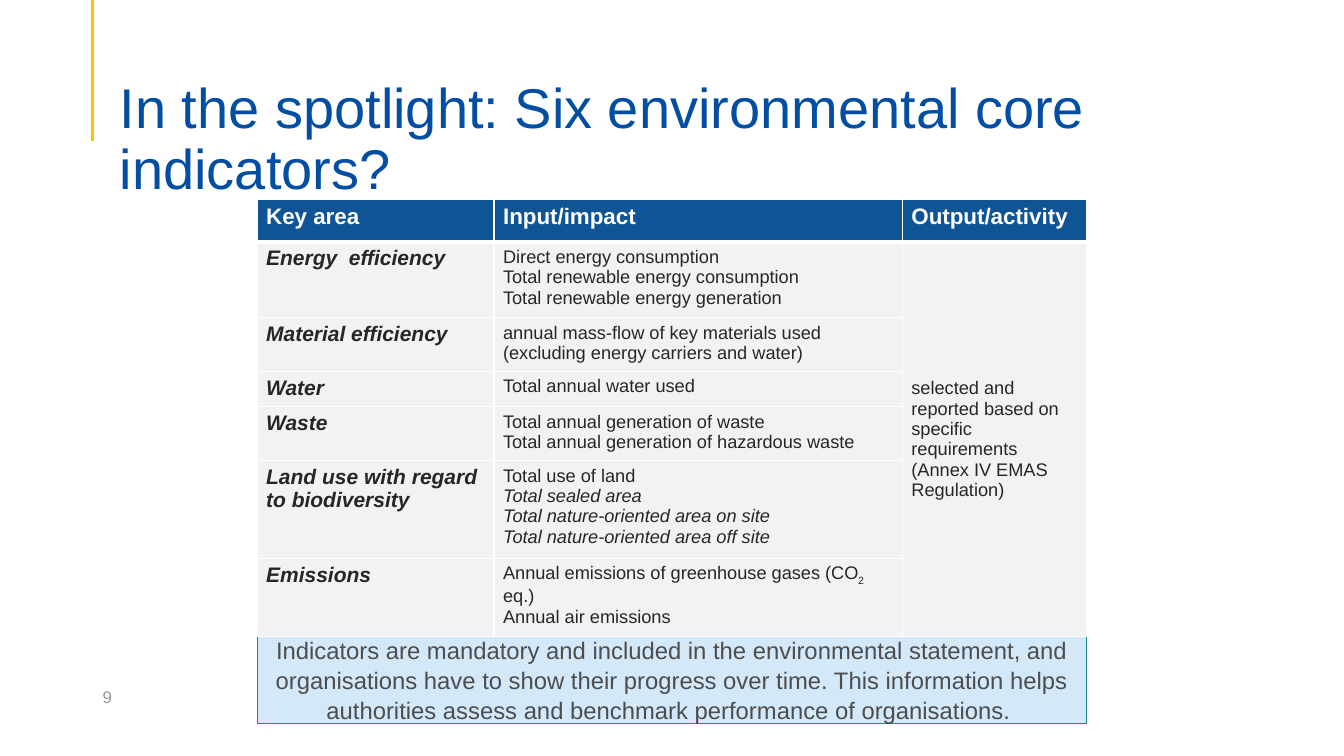
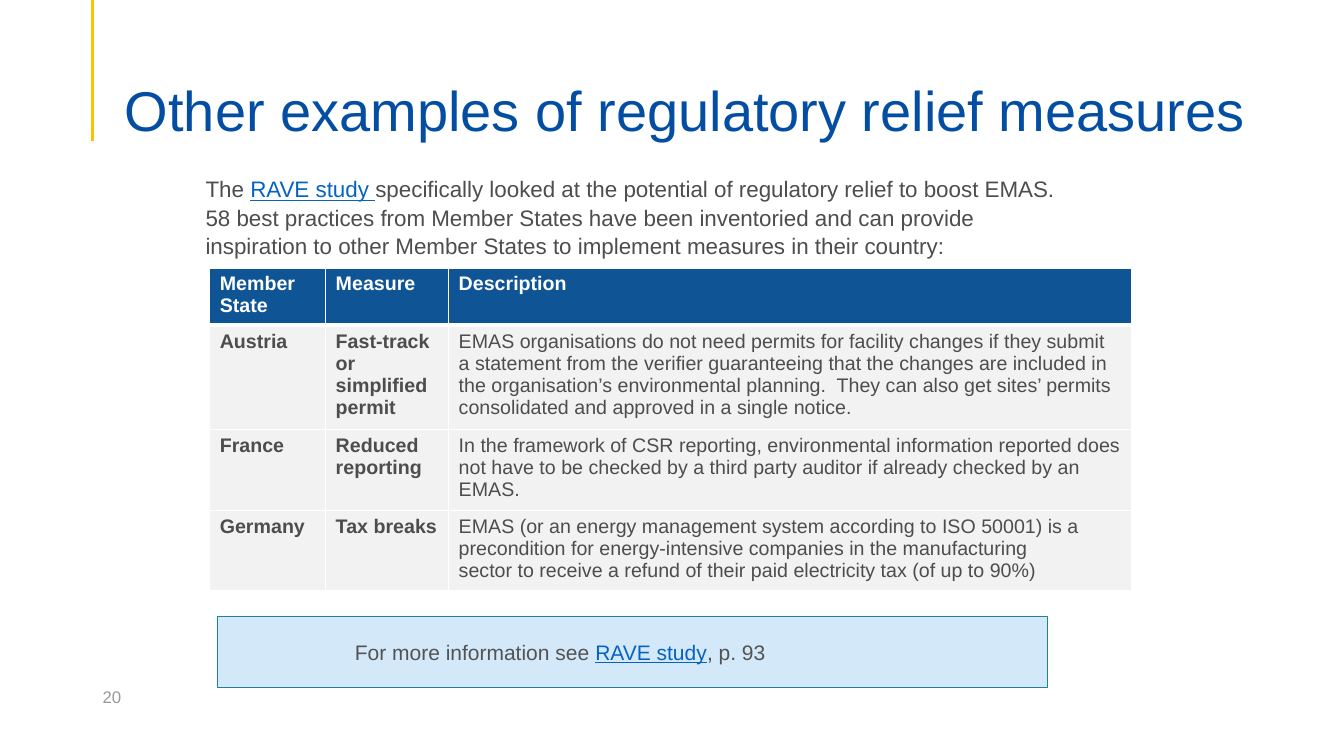
"""Builds two slides on environmental indicators and regulatory relief."""
from dataclasses import dataclass

from lxml import etree
from pptx import Presentation
from pptx.dml.color import RGBColor
from pptx.enum.shapes import MSO_CONNECTOR, MSO_SHAPE
from pptx.enum.text import MSO_ANCHOR, PP_ALIGN
from pptx.oxml.ns import qn
from pptx.util import Pt

RECT = MSO_SHAPE.RECTANGLE
STRAIGHT = MSO_CONNECTOR.STRAIGHT
TOP, MIDDLE, BOTTOM = MSO_ANCHOR.TOP, MSO_ANCHOR.MIDDLE, MSO_ANCHOR.BOTTOM
LEFT, CENTER = PP_ALIGN.LEFT, PP_ALIGN.CENTER
PX = 9144
SIDES = ("left", "top", "right", "bottom")


@dataclass(frozen=True)
class Theme:
    """Colours, font and type sizes of the deck."""
    font: str = "Arial"
    title: str = "034EA2"
    accent: str = "FFC000"
    header: str = "0F5494"
    row: str = "F2F2F2"
    white: str = "FFFFFF"
    dark: str = "262626"
    text: str = "4D4D4D"
    note: str = "535353"
    link: str = "0563C1"
    number: str = "979797"
    callout: str = "D3E8F9"
    callout_line: str = "1E858B"
    title_size: int = 40
    number_size: int = 12


T = Theme()
LINK = {"color": T.link, "underline": True}
ITALIC = {"italic": True}


def px(n):
    """Turn whole px into EMU."""
    return n * PX


def rgb(value):
    """Turn a hex string into a colour."""
    return RGBColor.from_string(value)


class Deck:
    """Holds the presentation, its theme and the current slide."""

    def __init__(self):
        self.prs = Presentation()
        self.prs.slide_width, self.prs.slide_height = px(1333), px(750)
        self.s = None

    def slide(self, title, x, y, w, h, number):
        """Start a slide with accent line, title and page number."""
        self.s = self.prs.slides.add_slide(self.prs.slide_layouts[6])
        self.line(92, 0, 92, 140)
        self.text([title], x, y, w, h, {"size": T.title_size, "color": T.title},
                  anchor=BOTTOM, insets=(10, 5, 10, 0), spacing=0.9)
        self.text([str(number)], 92, 671, 300, 40,
                  {"size": T.number_size, "color": T.number}, anchor=MIDDLE)

    def line(self, x1, y1, x2, y2):
        """Draw an accent line."""
        sp = self.s.shapes.add_connector(STRAIGHT, px(x1), px(y1), px(x2), px(y2))
        sp.line.color.rgb = rgb(T.accent)
        sp.line.width = Pt(2.25)
        etree.SubElement(sp._element.spPr, qn("a:effectLst"))

    def text(self, paras, x, y, w, h, fmt, **frame):
        """Add a text box."""
        sp = self.s.shapes.add_textbox(px(x), px(y), px(w), px(h))
        self.frame(sp.text_frame, paras, fmt, **frame)

    def callout(self, paras, x, y, w, h, fmt, **frame):
        """Add a tinted box with text."""
        sp = self.s.shapes.add_shape(RECT, px(x), px(y), px(w), px(h))
        sp.shadow.inherit = False
        sp.fill.solid()
        sp.fill.fore_color.rgb = rgb(T.callout)
        sp.line.color.rgb = rgb(T.callout_line)
        sp.line.width = Pt(0.5)
        self.frame(sp.text_frame, paras, fmt, anchor=MIDDLE, **frame)

    def frame(self, tf, paras, fmt, anchor=TOP, insets=(10, 5, 10, 5), **para):
        """Set up a text frame and fill it."""
        tf.word_wrap = True
        tf.vertical_anchor = anchor
        for side, inset in zip(SIDES, insets):
            setattr(tf, f"margin_{side}", px(inset))
        self.fill(tf, paras, fmt, **para)

    def fill(self, tf, paras, fmt, align=LEFT, spacing=None):
        """Write paragraphs, each a string or a list of runs."""
        for i, runs in enumerate(paras):
            p = tf.add_paragraph() if i else tf.paragraphs[0]
            p.alignment = align
            p.line_spacing = spacing
            for run in [runs] if isinstance(runs, str) else runs:
                text, extra = (run, {}) if isinstance(run, str) else run
                r = p.add_run()
                r.text = text
                self.format(r, {"name": T.font, **fmt, **extra})

    def format(self, r, fmt):
        """Apply format values to a run."""
        for key, value in fmt.items():
            if key == "color":
                r.font.color.rgb = rgb(value)
            elif key == "baseline":
                r._r.get_or_add_rPr().set(key, str(value))
            else:
                setattr(r.font, key, Pt(value) if key == "size" else value)

    def border(self, cell, tag, width):
        """Draw one white cell edge."""
        ln = etree.SubElement(cell._tc.get_or_add_tcPr(), qn(f"a:{tag}"),
                              w=str(Pt(width)))
        solid = etree.SubElement(ln, qn("a:solidFill"))
        etree.SubElement(solid, qn("a:srgbClr"), val=T.white)

    def table(self, rows, x, y, widths, heights, header, columns, inset, merge=None):
        """Add a table with a header row and one format per column."""
        table = self.s.shapes.add_table(len(rows), len(widths), px(x), px(y),
                                        px(sum(widths)), px(sum(heights))).table
        for col, w in zip(table.columns, widths):
            col.width = px(w)
        for row, h in zip(table.rows, heights):
            row.height = px(h)
        for i, row in enumerate(rows):
            for j, fmt in enumerate(columns):
                cell = table.cell(i, j)
                for side, margin in zip(SIDES, (inset, 5, inset, 5)):
                    setattr(cell, f"margin_{side}", px(margin))
                for tag, thick in (("lnL", False), ("lnR", False),
                                   ("lnT", i == 1), ("lnB", i == 0)):
                    self.border(cell, tag, 3 if thick else 1)
                cell.fill.solid()
                cell.fill.fore_color.rgb = rgb(T.row if i else T.header)
                if j < len(row):
                    self.fill(cell.text_frame, row[j], fmt if i else header)
        if merge:
            first, last = (table.cell(*at) for at in merge)
            first.merge(last)
            first.vertical_anchor = MIDDLE


def indicators(deck):
    """Build the slide on core indicators."""
    deck.slide("In the spotlight: Six environmental core indicators?",
               109, 77, 1150, 123, 9)
    deck.callout(
        ["Indicators are mandatory and included in the environmental statement, "
         "and organisations have to show their progress over time. This information "
         "helps authorities assess and benchmark performance of organisations. "],
        255, 630, 823, 88, {"size": 17, "color": T.text},
        insets=(5, 5, 5, 5), align=CENTER, spacing=1.05)
    rows = [
        (["Key area"], ["Input/impact"], ["Output/activity"]),
        (["Energy  efficiency"],
         ["Direct energy consumption", "Total renewable energy consumption",
          "Total renewable energy generation"],
         ["selected and reported based on specific requirements "
          "(Annex IV EMAS Regulation)"]),
        (["Material efficiency"],
         ["annual mass-flow of key materials used "
          "(excluding energy carriers and water)"]),
        (["Water"], ["Total annual water used"]),
        (["Waste"], ["Total annual generation of waste",
                     "Total annual generation of hazardous waste"]),
        (["Land use with regard to biodiversity"],
         ["Total use of land", [("Total sealed area", ITALIC)],
          [("Total nature-oriented area on site", ITALIC)],
          [("Total nature-oriented area off site", ITALIC)]]),
        (["Emissions"],
         [["Annual emissions of greenhouse gases (CO", ("2", {"baseline": -25000}),
           " eq.)"], "Annual air emissions"]),
    ]
    area = {"size": 15, "color": T.dark, "bold": True, "italic": True}
    detail = {"size": 13, "color": T.dark, "bold": False}
    deck.table(rows, 255, 198, (235, 405, 183), (42, 73, 52, 33, 52, 94, 72),
               {"size": 16, "color": T.white, "bold": True},
               (area, detail, detail), 9, merge=((1, 2), (6, 2)))


def relief(deck):
    """Build the slide on regulatory relief."""
    deck.slide("Other examples of regulatory relief measures",
               114, 57, 1150, 86, 20)
    rows = [
        (["Member State"], ["Measure"], ["Description"]),
        (["Austria"], ["Fast-track or simplified permit"],
         ["EMAS organisations do not need permits for facility changes if they "
          "submit a statement from the verifier guaranteeing that the changes are "
          "included in the organisation’s environmental planning.  They can also "
          "get sites’ permits consolidated and approved in a single notice."]),
        (["France"], ["Reduced reporting"],
         ["In the framework of CSR reporting, environmental information reported "
          "does not have to be checked by a third party auditor if already checked "
          "by an EMAS."]),
        (["Germany"], ["Tax breaks"],
         ["EMAS (or an energy management system according to ISO 50001) is a "
          "precondition for energy-intensive companies in the manufacturing",
          "sector to receive a refund of their paid electricity tax (of up to 90%)"]),
    ]
    detail = {"size": 14, "color": T.text, "bold": False}
    label = {**detail, "bold": True}
    deck.table(rows, 208, 266, (115, 122, 677), (53, 99, 76, 76),
               {**label, "color": T.white}, (label, label, detail), 10)
    deck.callout([["For more information see ", ("RAVE study", LINK),
                   (", ", {"color": T.text}), "p. 93"]],
                 216, 611, 823, 71, {"size": 15, "color": T.note},
                 insets=(136, 5, 5, 5))
    deck.text([["The ", ("RAVE study ", LINK),
                "specifically looked at the potential of regulatory relief to boost "
                "EMAS. 58 best practices from Member States have been inventoried "
                "and can provide inspiration to other Member States to implement "
                "measures in their country:"]],
              194, 168, 878, 88, {"size": 16, "color": T.text}, spacing=1.05)


def main():
    """Build and save the deck."""
    deck = Deck()
    indicators(deck)
    relief(deck)
    deck.prs.save("out.pptx")


if __name__ == "__main__":
    main()
